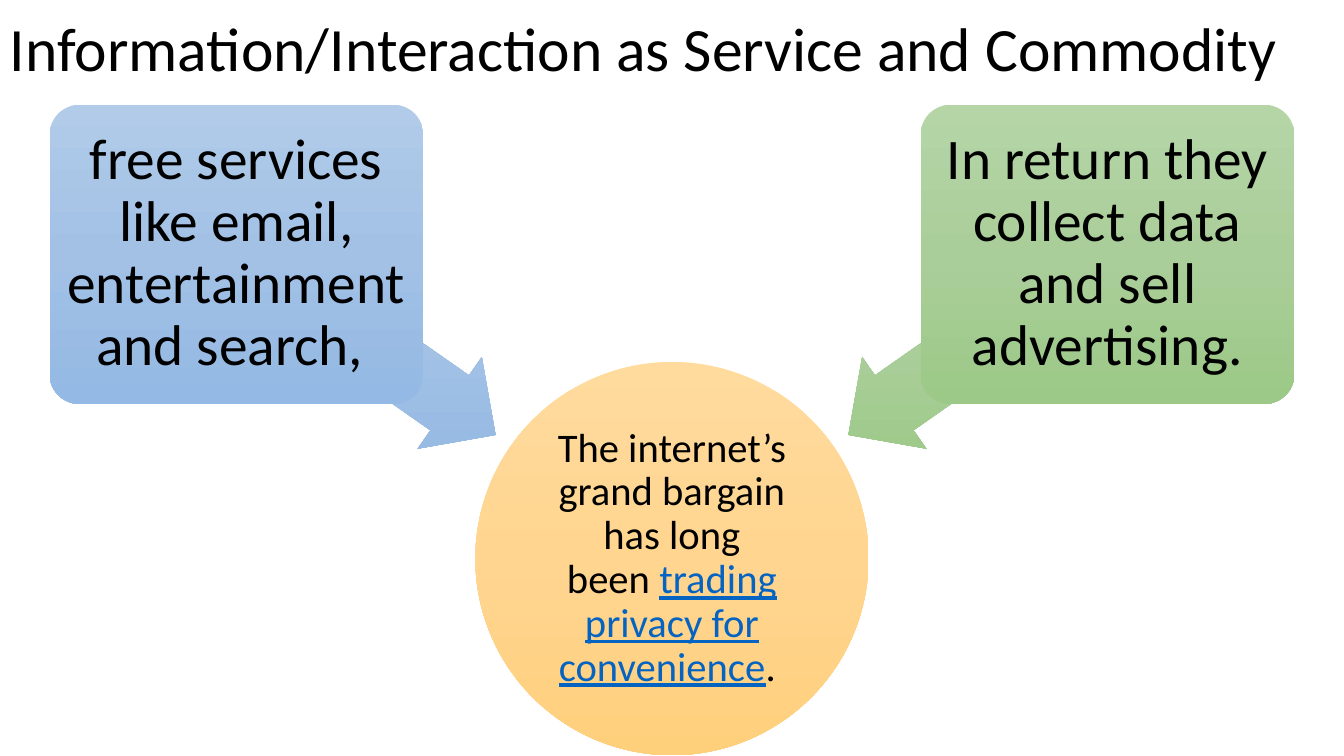
import copy
import pptx
import pptx.dml.color
import pptx.enum.shapes
import pptx.enum.text
import pptx.oxml.ns
import pptx.util

Cm = pptx.util.Cm
Kind = pptx.enum.shapes.MSO_SHAPE
Align = pptx.enum.text.PP_ALIGN

THEME = {
    "font": "Calibri",
    "ink": "000000",
    "link": "0563C1",
    "title": 44,
    "box": 41,
    "hub": 29,
    "blue": ("B1CBE9", "A3C1E5", "93B9E4"),
    "green": ("B5D5A7", "AACE9A", "9CC987"),
    "gold": ("FFDB9E", "FFD590", "FFD07C"),
}

TITLE = [("Information/Interaction as Service and Commodity", "ink")]
HUB = [
    ("The internet’s grand bargain has long been\u00a0".replace("\u00a0", chr(160)), "ink"),
    ("trading privacy for convenience", "link"),
    (". ", "ink"),
]
SIDES = [
    ([("free services like email, entertainment and search, ", "ink")], "blue", 215),
    ([("In return they collect data and sell advertising.", "ink")], "green", 325),
]

WIDE, HIGH = 33.87, 19.05
BOX = (1.25, 2.64, 9.42, 7.54)
ARROW = (5.23, 7.26, 7.98, 2.82)
DISC, DISC_TOP = 9.91, 9.12


def color(code):
    return pptx.dml.color.RGBColor.from_string(code)


def shade(shape, tones):
    shape.fill.gradient()
    shape.fill.gradient_angle = 270
    grad = shape._element.spPr.find(pptx.oxml.ns.qn("a:gradFill"))
    grad.set("rotWithShape", "0")
    first = grad.find(pptx.oxml.ns.qn("a:gsLst"))[0]
    first.addnext(copy.deepcopy(first))
    for stop, tone, place in zip(shape.fill.gradient_stops, tones, (0, 0.5, 1)):
        stop.color.rgb = color(tone)
        stop.position = place


def draw(slide, kind, place, tones):
    shape = slide.shapes.add_shape(kind, *map(Cm, place))
    shape.shadow.inherit = False
    shape.line.fill.background()
    shade(shape, THEME[tones])
    return shape


def write(shape, runs, size, inset, align=Align.CENTER):
    frame = shape.text_frame
    frame.word_wrap = True
    frame.vertical_anchor = pptx.enum.text.MSO_ANCHOR.MIDDLE
    frame.margin_left = frame.margin_right = Cm(inset)
    frame.margin_top = frame.margin_bottom = Cm(min(inset, 0.2))
    para = frame.paragraphs[0]
    para.alignment = align
    para.line_spacing = 0.9
    for text, tint in runs:
        run = para.add_run()
        run.text = text
        run.font.name = THEME["font"]
        run.font.size = pptx.util.Pt(THEME[size])
        run.font.color.rgb = color(THEME[tint])
        run.font.underline = tint == "link"


def flip(place):
    left, top, width, height = place
    return WIDE - left - width, top, width, height


def main():
    deck = pptx.Presentation()
    deck.slide_width, deck.slide_height = Cm(WIDE), Cm(HIGH)
    slide = deck.slides.add_slide(deck.slide_layouts[6])

    title = slide.shapes.add_textbox(0, 0, Cm(WIDE), Cm(2.62))
    write(title, TITLE, "title", 0.25, Align.LEFT)

    disc = draw(slide, Kind.OVAL, ((WIDE - DISC) / 2, DISC_TOP, DISC, DISC), "gold")
    write(disc, HUB, "hub", 0.05)

    for side, (runs, tones, turn) in enumerate(SIDES):
        spots = [flip(spot) if side else spot for spot in (ARROW, BOX)]
        arrow = draw(slide, Kind.LEFT_ARROW, spots[0], tones)
        arrow.rotation = turn
        arrow.adjustments[0] = 0.6
        arrow.adjustments[1] = 0.5
        box = draw(slide, Kind.ROUNDED_RECTANGLE, spots[1], tones)
        box.adjustments[0] = 0.1
        write(box, runs, "box", 0.2)

    deck.save("out.pptx")


if __name__ == "__main__":
    main()
